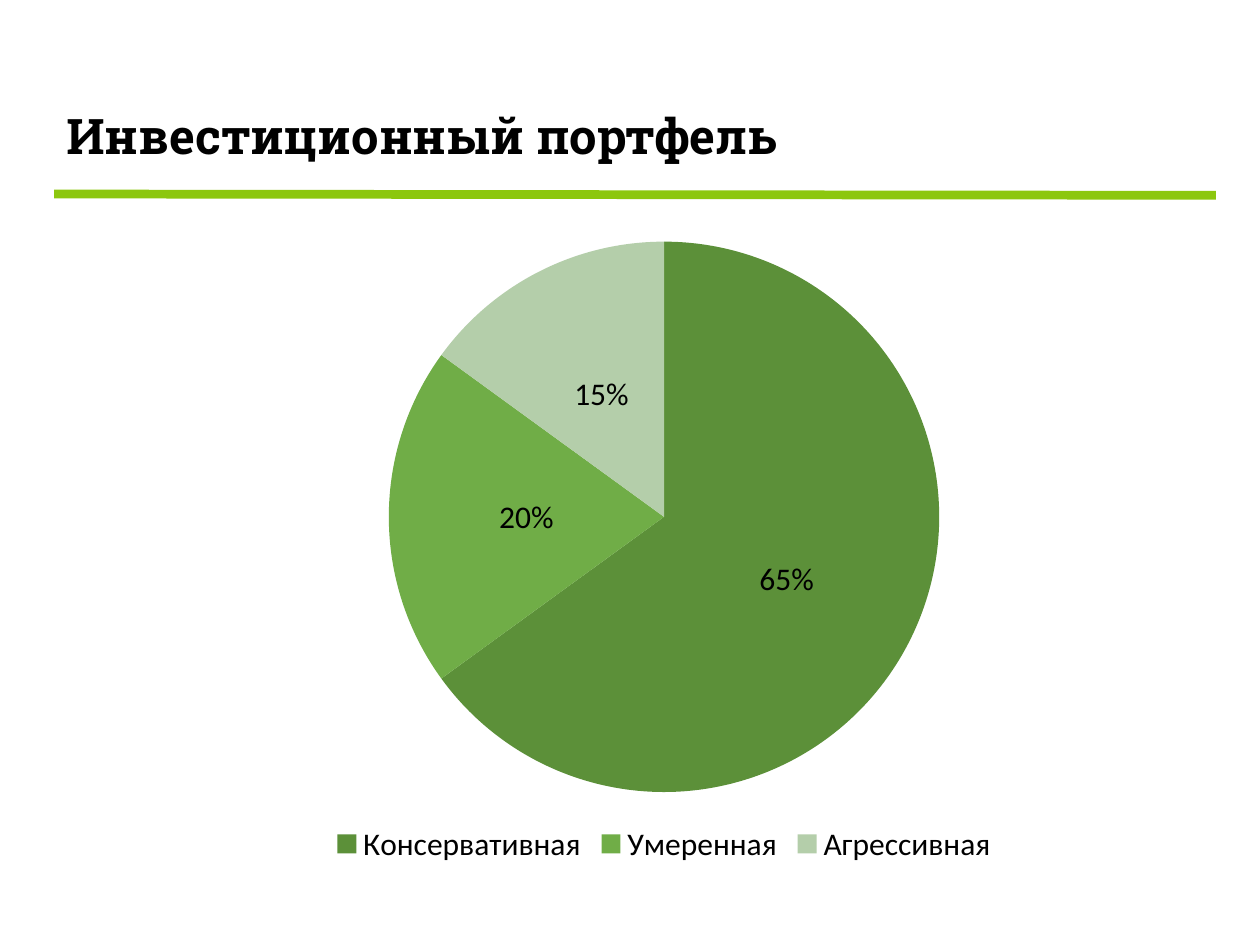
from lxml.etree import SubElement
from pptx import Presentation
from pptx.chart.data import CategoryChartData
from pptx.dml.color import RGBColor
from pptx.enum.chart import XL_CHART_TYPE, XL_LABEL_POSITION, XL_LEGEND_POSITION
from pptx.enum.shapes import MSO_CONNECTOR
from pptx.enum.text import MSO_AUTO_SIZE
from pptx.oxml.ns import qn
from pptx.util import Inches, Pt

BLACK = RGBColor(0x00, 0x00, 0x00)
LIME = RGBColor(0x8C, 0xC7, 0x0E)
DARK_GREEN = RGBColor(0x5C, 0x90, 0x39)
GREEN = RGBColor(0x70, 0xAD, 0x47)
PALE_GREEN = RGBColor(0xB4, 0xCE, 0xAA)

PORTFOLIO = [
    ("Консервативная", 65, DARK_GREEN),
    ("Умеренная", 20, GREEN),
    ("Агрессивная", 15, PALE_GREEN),
]


def format_font(font, name, size, bold=False):
    font.name = name
    font.size = Pt(size)
    font.bold = bold
    font.color.rgb = BLACK


def add_title(slide, text):
    box = slide.shapes.add_textbox(Inches(0.43), Inches(0.79), Inches(8.27), Inches(0.57))
    text_frame = box.text_frame
    text_frame.word_wrap = True
    text_frame.auto_size = MSO_AUTO_SIZE.SHAPE_TO_FIT_TEXT
    text_frame.text = text
    format_font(text_frame.paragraphs[0].runs[0].font, "Roboto Slab", 28, bold=True)


def add_rule(slide):
    rule = slide.shapes.add_connector(
        MSO_CONNECTOR.STRAIGHT, Inches(0.43), Inches(1.54), Inches(9.65), Inches(1.55)
    )
    rule.line.color.rgb = LIME
    rule.line.width = Pt(5)
    SubElement(rule._element.spPr, qn("a:effectLst"))


def add_portfolio_chart(slide):
    names, shares, colors = zip(*PORTFOLIO)
    chart_data = CategoryChartData()
    chart_data.categories = names
    chart_data.add_series("Series 1", shares)
    chart = slide.shapes.add_chart(
        XL_CHART_TYPE.PIE, Inches(1.85), Inches(1.78), Inches(6.84), Inches(5.12), chart_data
    ).chart
    chart.has_title = False
    format_font(chart.font, "Calibri", 18)

    chart.has_legend = True
    chart.legend.position = XL_LEGEND_POSITION.BOTTOM
    chart.legend.include_in_layout = False

    plot = chart.plots[0]
    plot.vary_by_categories = True
    for index, color in enumerate(colors):
        fill = plot.series[0].points[index].format.fill
        fill.solid()
        fill.fore_color.rgb = color

    labels = plot.series[0].data_labels
    labels.show_value = False
    labels.show_percentage = True
    labels.number_format = "0%"
    labels.number_format_is_linked = False
    labels.position = XL_LABEL_POSITION.CENTER
    format_font(labels.font, "Calibri", 18)


def main():
    presentation = Presentation()
    presentation.slide_width = Inches(10)
    presentation.slide_height = Inches(7.5)
    slide = presentation.slides.add_slide(presentation.slide_layouts[6])
    add_title(slide, "Инвестиционный портфель")
    add_rule(slide)
    add_portfolio_chart(slide)
    presentation.save("out.pptx")


if __name__ == "__main__":
    main()
